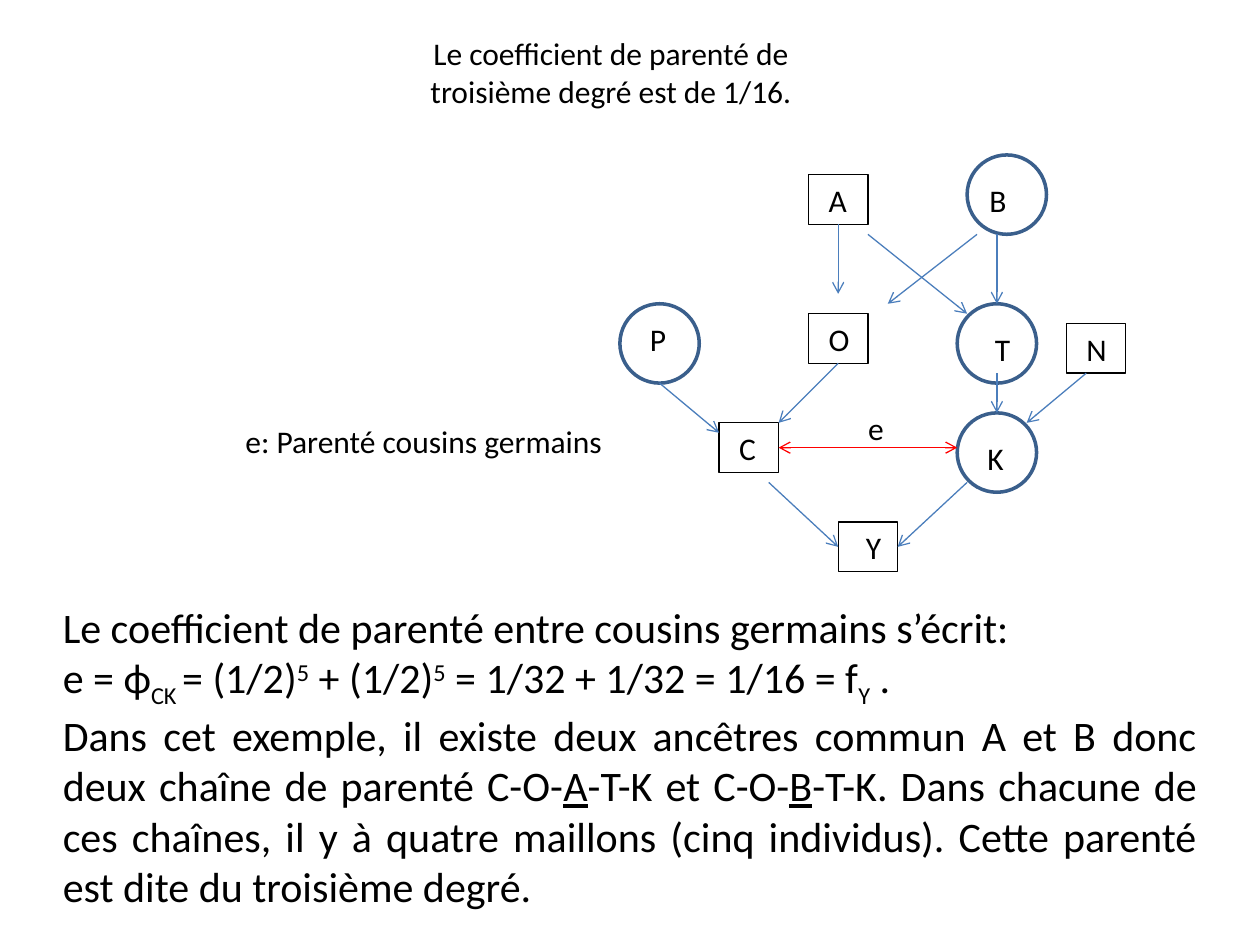
"""Build the slide on the kinship coefficient of first cousins with its pedigree."""
from dataclasses import dataclass

from lxml.etree import SubElement
from pptx import Presentation
from pptx.dml.color import RGBColor
from pptx.enum.shapes import MSO_CONNECTOR as Link, MSO_SHAPE as Shape
from pptx.enum.text import MSO_ANCHOR as Anchor, PP_ALIGN as Align
from pptx.oxml.ns import qn
from pptx.util import Inches, Pt


@dataclass(frozen=True)
class Theme:
    font: str = "Calibri"
    label_size: int = 18
    body_size: int = 24
    ink: str = "000000"
    paper: str = "FFFFFF"
    ring: str = "3A5F8C"
    arrow: str = "4B7EBC"
    kinship: str = "FF0000"
    thin: float = 0.75
    thick: float = 2


THEME = Theme()
WIDTH, HEIGHT = 10, 7.5
CELL = WIDTH / 127
TREE_LEFT, TREE_TOP = 4.92, 1.23
RING, BOX_WIDTH, BOX_HEIGHT = 8, 6, 5
INSET, SPACE = 0.1, 0.06
TOP, LEFT, BOTTOM, RIGHT = range(4)

TITLE = "Le coefficient de parenté de troisième degré est de 1/16."
LEGEND = "e: Parenté cousins germains"
SUB, SUPER, LINED = {"baseline": -25}, {"baseline": 30}, {"underline": True}
BODY = [
    [("Le coefficient de parenté entre cousins germains s’écrit:", {})],
    [("e = ϕ", {}), ("CK ", SUB), ("= (1/2)", {}), ("5", SUPER),
     (" + (1/2)", {}), ("5", SUPER), (" = 1/32 + 1/32 = 1/16 = f", {}),
     ("Y", SUB), (" .", {})],
    [("Dans cet exemple, il existe deux ancêtres commun A et B donc deux "
      "chaîne de parenté C-O-", {}), ("A", LINED), ("-T-K et C-O-", {}),
     ("B", LINED), ("-T-K. Dans chacune de ces chaînes, il y à quatre "
                    "maillons (cinq individus). Cette parenté est dite du "
                    "troisième degré.", {})],
]

# name: column, row, indent in spaces
MALES = {"A": (19, 2, 1), "O": (19, 16, 1), "N": (45, 17, 1),
         "C": (10, 27, 1), "Y": (22, 37, 2)}
FEMALES = {"B": (35, 0), "T": (34, 15), "P": (0, 15), "K": (34, 26)}
LABELS = {"B": (36, 2, 0), "T": (35, 17, 2), "P": (1, 16, 1),
          "K": (35, 28, 1), "e": (23, 25, 1)}
DESCENT = [
    {"start": (22, 7), "end": (22, 14), "leaves": ("A", BOTTOM)},
    {"start": (25, 8), "end": (35, 16)},
    {"start": (36, 8), "end": (27, 15)},
    {"start": (38, 8), "end": (38, 15)},
    {"start": (4, 23), "end": (10, 28)},
    {"start": (22, 21), "end": (16, 27), "leaves": ("O", BOTTOM)},
    {"start": (38, 22), "end": (38, 26)},
    {"start": (47, 22), "end": (41, 27)},
    {"start": (15, 33), "end": (22, 39.5), "reaches": ("Y", LEFT)},
    {"start": (35, 33), "end": (28, 39.5), "reaches": ("Y", RIGHT)},
]
KINSHIP = {"start": (16, 29.5), "end": (34, 29.5), "leaves": ("C", RIGHT)}


def color(value):
    """Turn a hex value into a colour."""
    return RGBColor.from_string(value)


def place(column, row):
    """Return the slide position of a pedigree grid point."""
    return Inches(TREE_LEFT + column * CELL), Inches(TREE_TOP + row * CELL)


def write(box, paragraphs, size=THEME.label_size, align=Align.LEFT, indent=0):
    """Fill a box with formatted text."""
    frame = box.text_frame
    frame.word_wrap = True
    frame.vertical_anchor = Anchor.TOP
    frame.margin_left = Inches(INSET + indent * SPACE)
    frame.margin_right = Inches(INSET)
    if isinstance(paragraphs, str):
        paragraphs = [[(paragraphs, {})]]
    for index, spans in enumerate(paragraphs):
        para = frame.add_paragraph() if index else frame.paragraphs[0]
        para.alignment = align
        for text, style in spans:
            span = para.add_run()
            span.text = text
            span.font.name = THEME.font
            span.font.size = Pt(size)
            span.font.color.rgb = color(THEME.ink)
            if style.get("underline"):
                span.font.underline = True
            if "baseline" in style:
                span._r.get_or_add_rPr().set("baseline", str(style["baseline"] * 1000))


def add_text(page, left, top, width, height, text, **style):
    """Add a text box placed by shares of the slide."""
    box = page.shapes.add_textbox(Inches(left * WIDTH), Inches(top * HEIGHT),
                                  Inches(width * WIDTH), Inches(height * HEIGHT))
    write(box, text, **style)


def add_person(page, kind, column, row, width, height, line, weight, fill=None):
    """Add one pedigree symbol."""
    person = page.shapes.add_shape(kind, *place(column, row),
                                   Inches(width * CELL), Inches(height * CELL))
    person.shadow.inherit = False
    if fill:
        person.fill.solid()
        person.fill.fore_color.rgb = color(fill)
    else:
        person.fill.background()
    person.line.color.rgb = color(line)
    person.line.width = Pt(weight)
    return person


def add_arrow(page, people, start, end, leaves=None, reaches=None,
              tint=THEME.arrow, heads=("a:tailEnd",)):
    """Add an arrow, joined to the people it leaves or reaches."""
    arrow = page.shapes.add_connector(Link.STRAIGHT, *place(*start), *place(*end))
    if leaves:
        arrow.begin_connect(people[leaves[0]], leaves[1])
    if reaches:
        arrow.end_connect(people[reaches[0]], reaches[1])
    arrow.line.color.rgb = color(tint)
    arrow.line.width = Pt(THEME.thin)
    for head in heads:
        SubElement(arrow.line._get_or_add_ln(), qn(head), type="arrow")
    SubElement(arrow._element.spPr, qn("a:effectLst"))


def main():
    """Compose and save the deck."""
    deck = Presentation()
    deck.slide_width, deck.slide_height = Inches(WIDTH), Inches(HEIGHT)
    page = deck.slides.add_slide(deck.slide_layouts[6])

    add_text(page, 0.33, 0.03, 0.31, 0.09, TITLE, align=Align.CENTER)
    add_text(page, 0.18, 0.44, 0.32, 0.05, LEGEND, indent=0.8)
    add_text(page, 0.04, 0.63, 0.92, 0.36, BODY, size=THEME.body_size,
             align=Align.JUSTIFY)

    people = {}
    for name, (column, row) in FEMALES.items():
        people[name] = add_person(page, Shape.OVAL, column, row, RING, RING,
                                  THEME.ring, THEME.thick, THEME.paper)
    for name, (column, row, indent) in MALES.items():
        people[name] = add_person(page, Shape.RECTANGLE, column, row, BOX_WIDTH,
                                  BOX_HEIGHT, THEME.ink, THEME.thin)
        write(people[name], name, indent=indent)
    for arrow in DESCENT:
        add_arrow(page, people, **arrow)
    add_arrow(page, people, **KINSHIP, tint=THEME.kinship,
              heads=("a:headEnd", "a:tailEnd"))
    for name, (column, row, indent) in LABELS.items():
        left, top = place(column, row)
        add_text(page, left / deck.slide_width, top / deck.slide_height,
                 BOX_WIDTH * CELL / WIDTH, BOX_HEIGHT * CELL / HEIGHT,
                 name, indent=indent)

    deck.save("out.pptx")


if __name__ == "__main__":
    main()
